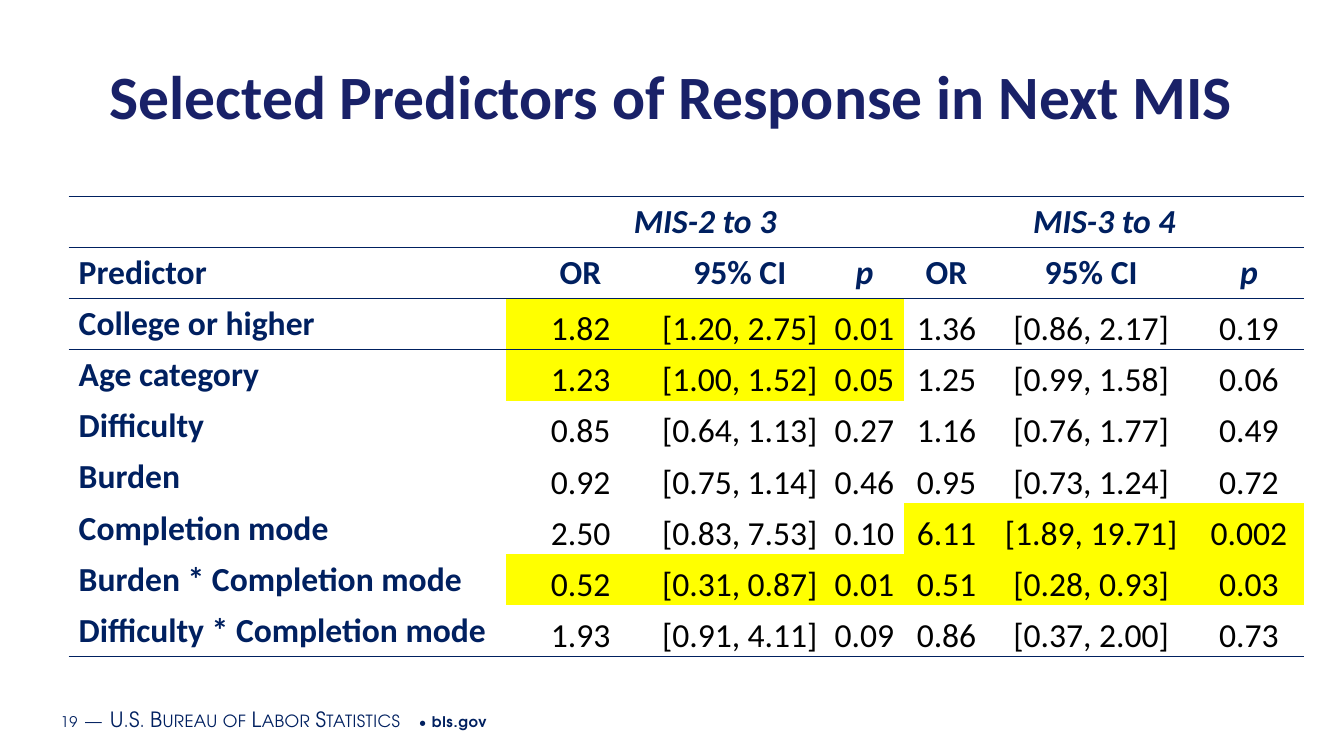
import pptx
import pptx.util
import pptx.dml.color
import pptx.enum.text
import pptx.oxml
import pptx.oxml.ns

Cm, Pt = pptx.util.Cm, pptx.util.Pt
ALIGN = pptx.enum.text.PP_ALIGN
ANCHOR = pptx.enum.text.MSO_ANCHOR

COLORS = {"title": "192168", "navy": "002060", "text": "000000", "mark": "FFFF00"}
PLAIN = "{2D5ABB26-0587-4C30-8999-92F81FD0307C}"  # table style without grid

WIDTHS = [11.02, 3.76, 4.27, 2.01, 2.13, 5.16, 2.79]
HEADS = ["Predictor"] + ["OR", "95% CI", "p"] * 2
GROUPS = {1: "MIS-2 to 3", 4: "MIS-3 to 4"}

# Label, values, first columns of the highlighted groups
ROWS = [
    ("College or higher", ["1.82", "[1.20, 2.75]", "0.01", "1.36", "[0.86, 2.17]", "0.19"], [1]),
    ("Age category", ["1.23", "[1.00, 1.52]", "0.05", "1.25", "[0.99, 1.58]", "0.06"], [1]),
    ("Difficulty", ["0.85", "[0.64, 1.13]", "0.27", "1.16", "[0.76, 1.77]", "0.49"], []),
    ("Burden", ["0.92", "[0.75, 1.14]", "0.46", "0.95", "[0.73, 1.24]", "0.72"], []),
    ("Completion mode", ["2.50", "[0.83, 7.53]", "0.10", "6.11", "[1.89, 19.71]", "0.002"], [4]),
    ("Burden * Completion mode",
     ["0.52", "[0.31, 0.87]", "0.01", "0.51", "[0.28, 0.93]", "0.03"], [1, 4]),
    ("Difficulty * Completion mode",
     ["1.93", "[0.91, 4.11]", "0.09", "0.86", "[0.37, 2.00]", "0.73"], []),
]

# Text, size, letter spacing in 1/100 pt, small caps, bold
FOOTER = [
    ("19", 10.5, 50, False, False),
    (" ", 16, 50, False, False),
    ("—", 15, 30, True, False),
    (" ", 16, 50, False, False),
    ("U.S. Bureau of Labor Statistics", 15, 30, True, False),
    (" • ", 10.5, 50, False, False),
    ("bls.gov", 10.5, 50, False, True),
]


def color(key):
    return pptx.dml.color.RGBColor.from_string(COLORS[key])


def style(font, size, key, bold=False, italic=False, name="Calibri"):
    font.name, font.size = name, Pt(size)
    font.bold, font.italic = bold, italic
    font.color.rgb = color(key)


def rule(cell, sides):
    """Draw navy borders on the given sides, in schema order."""
    props = cell._tc.get_or_add_tcPr()
    for i, side in enumerate(sides):
        props.insert(i, pptx.oxml.parse_xml(
            f'<a:ln{side} {pptx.oxml.ns.nsdecls("a")} w="12700"><a:solidFill>'
            f'<a:srgbClr val="{COLORS["navy"]}"/></a:solidFill></a:ln{side}>'))


def add_title(slide, left, top, width, height):
    title = slide.shapes.title
    title.left, title.top, title.width, title.height = map(Cm, (left, top, width, height))
    frame = title.text_frame
    frame.text = "Selected Predictors of Response in Next MIS"
    frame.vertical_anchor = ANCHOR.MIDDLE
    para = frame.paragraphs[0]
    para.alignment = ALIGN.CENTER
    style(para.font, 44, "title", bold=True)


def fill_cell(cell, text, head, label, italic, mark):
    cell.text = text
    para = cell.text_frame.paragraphs[0]
    para.alignment = ALIGN.LEFT if label else ALIGN.CENTER
    strong = head or label
    style(para.font, 24, "navy" if strong else "text", strong, italic)
    if not strong:
        cell.vertical_anchor = ANCHOR.BOTTOM
        cell.margin_left = cell.margin_right = cell.margin_top = Cm(0.03)
        cell.margin_bottom = 0
    if mark:
        cell.fill.solid()
        cell.fill.fore_color.rgb = color("mark")
    else:
        cell.fill.background()


def add_odds(slide, left, top, width, height):
    grid = [[GROUPS.get(c, "") for c in range(len(HEADS))], HEADS]
    grid += [[name] + values for name, values, _ in ROWS]
    last = len(grid) - 1
    frame = slide.shapes.add_table(len(grid), len(HEADS),
                                   *map(Cm, (left, top, width, height)))
    table = frame.table
    table._tbl.tblPr.find(pptx.oxml.ns.qn("a:tableStyleId")).text = PLAIN
    table.first_row = table.horz_banding = False
    for col, size in zip(table.columns, WIDTHS):
        col.width = Cm(size)
    for r, line in enumerate(grid):
        table.rows[r].height = Cm(height / len(grid))
        marks = ROWS[r - 2][2] if r > 1 else []
        sides = ("T" if r < 3 else "") + ("B" if r in (0, 1, last) else "")
        for c, text in enumerate(line):
            cell = table.cell(r, c)
            italic = r == 0 or text == "p"
            mark = any(first <= c < first + 3 for first in marks)
            fill_cell(cell, text, r < 2, c == 0, italic, mark)
            rule(cell, sides)
    for first in GROUPS:
        table.cell(0, first).merge(table.cell(0, first + 2))


def add_footer(slide, left, top, width, height):
    box = slide.shapes.add_textbox(*map(Cm, (left, top, width, height)))
    frame = box.text_frame
    frame.word_wrap = True
    frame.vertical_anchor = ANCHOR.MIDDLE
    frame.margin_left = frame.margin_right = Cm(0.18)
    frame.margin_top = frame.margin_bottom = Cm(0.1)
    for text, size, space, small, bold in FOOTER:
        run = frame.paragraphs[0].add_run()
        run.text = text
        style(run.font, size, "navy", bold, name="TeX Gyre Adventor")
        props = run._r.get_or_add_rPr()
        props.set("spc", str(space))
        if small:
            props.set("cap", "small")


def main():
    deck = pptx.Presentation()
    deck.slide_width, deck.slide_height = Cm(33.87), Cm(19.05)
    slide = deck.slides.add_slide(deck.slide_layouts[5])
    add_footer(slide, 1.35, 17.6, 21.51, 1.02)
    add_title(slide, 1.37, 1.27, 31.12, 2.24)
    add_odds(slide, 1.73, 4.95, sum(WIDTHS), 11.6)
    deck.save("out.pptx")


if __name__ == "__main__":
    main()
